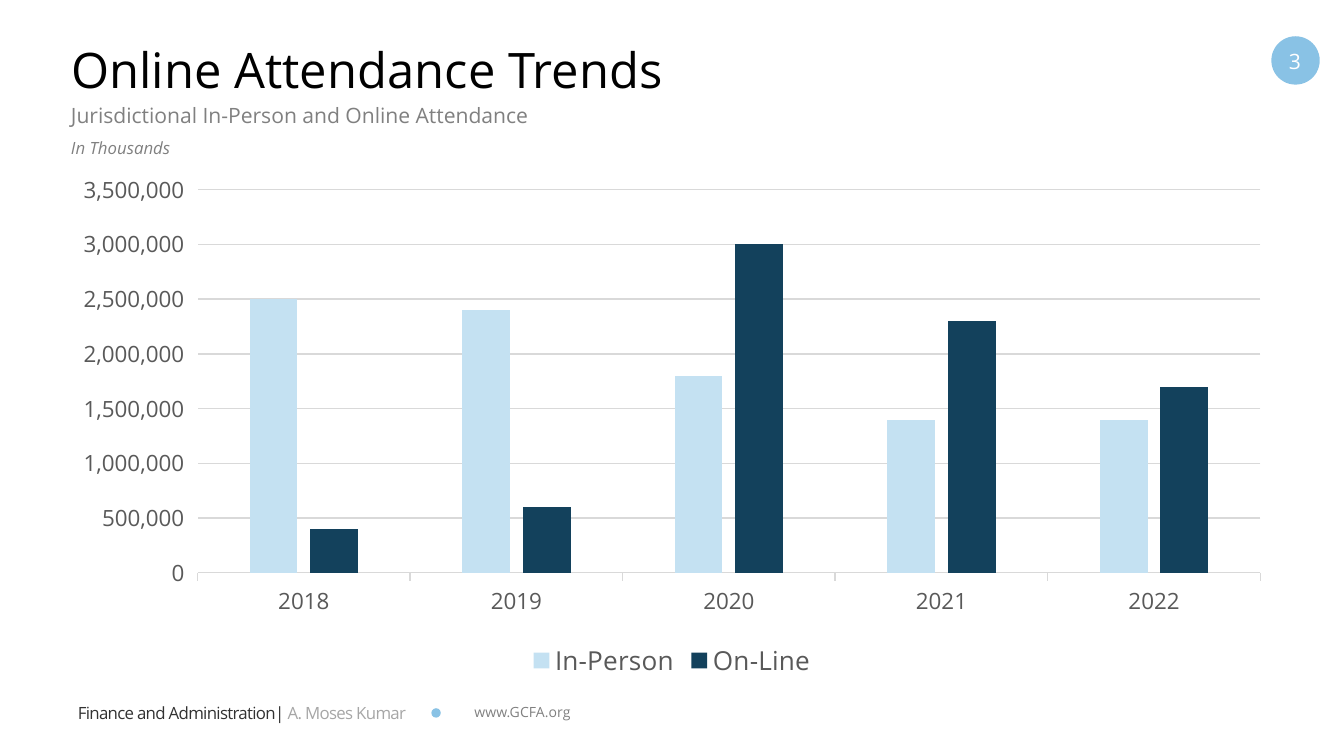
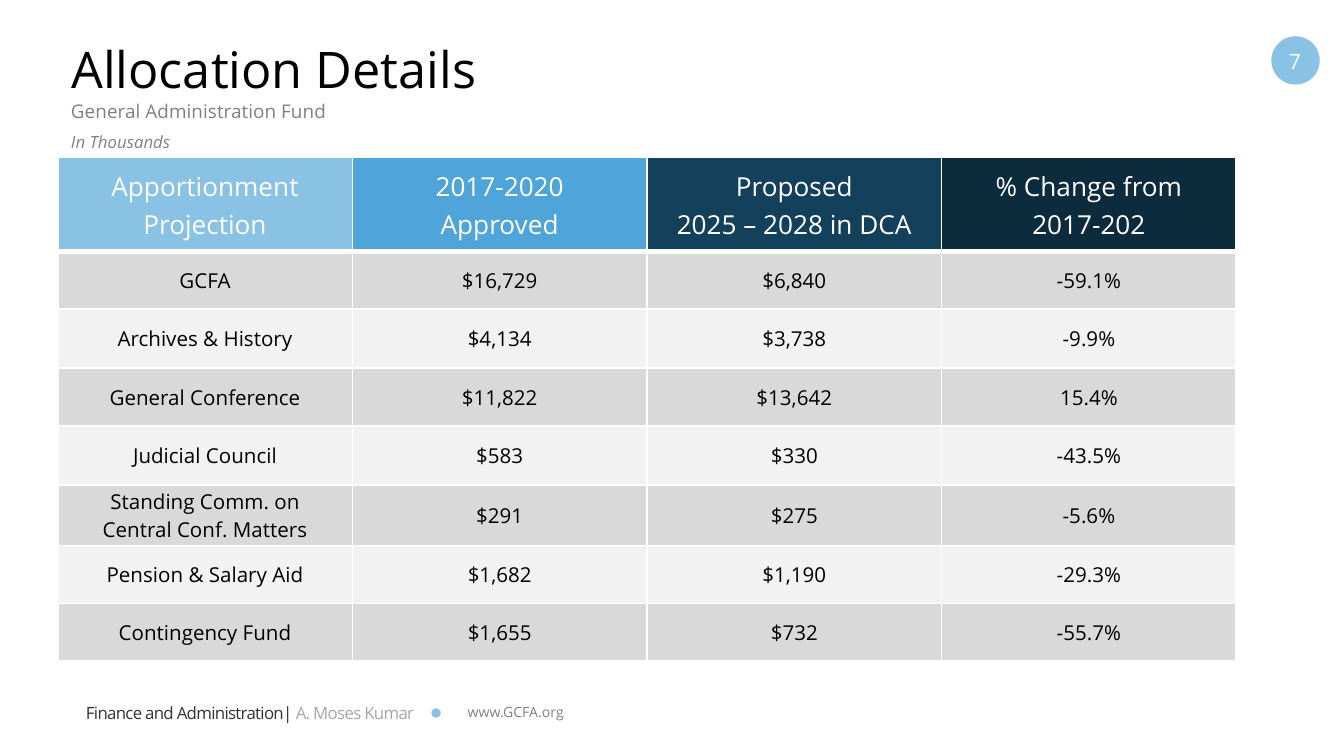
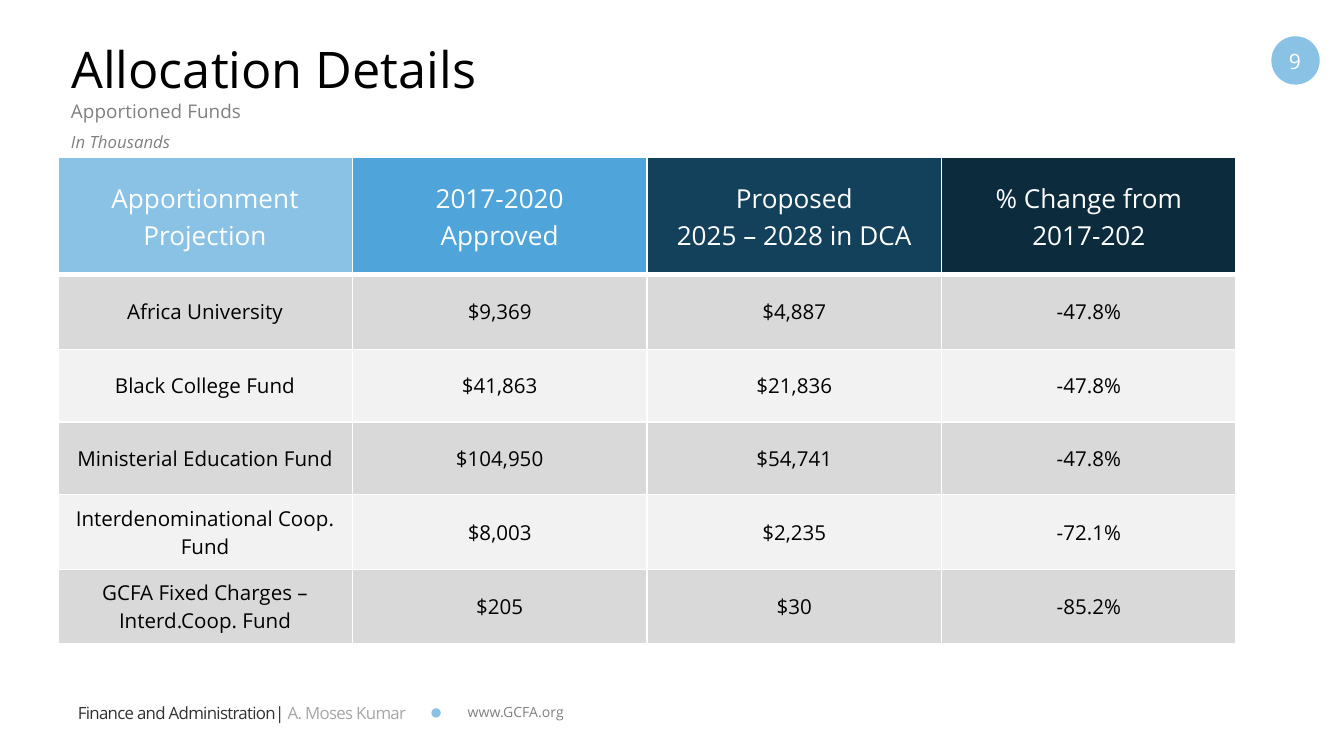
import pptx
import pptx.chart.data
import pptx.dml.color
import pptx.enum.chart
import pptx.enum.shapes
import pptx.enum.text
import pptx.oxml
import pptx.oxml.ns
import pptx.util
from pptx.util import Inches, Pt

FONT = "Open Sans"
BLACK, WHITE = "000000", "FFFFFF"
GRAY, DARK_GRAY, PALE_GRAY = "808080", "323232", "A6A6A6"
CHART_TEXT, GRID = "595959", "D9D9D9"
SKY, BLUE, NAVY, MIDNIGHT, PALE_BLUE = "89C2E5", "4FA4D9", "13415C", "0C2C3E", "C4E1F2"
HEADER_FILLS = [SKY, BLUE, NAVY, MIDNIGHT]
BAND_FILLS = ["D9D9D9", "F2F2F2"]

LEFT = 0.43
TABLE_TOP, TABLE_WIDTH = 1.17, 8.77
CENTER = pptx.enum.text.PP_ALIGN.CENTER
MIDDLE = pptx.enum.text.MSO_ANCHOR.MIDDLE

TABLE_HEADER = ["Apportionment\nProjection", "2017-2020\nApproved",
                "Proposed\n2025 – 2028 in DCA", "% Change from\n2017-202"]
GENERAL_ADMINISTRATION = [
    ["GCFA", "$16,729", "$6,840", "-59.1%"],
    ["Archives & History", "$4,134", "$3,738", "-9.9%"],
    ["General Conference", "$11,822", "$13,642", "15.4%"],
    ["Judicial Council", "$583", "$330", "-43.5%"],
    ["Standing Comm. on\nCentral Conf. Matters", "$291", "$275", "-5.6%"],
    ["Pension & Salary Aid", "$1,682", "$1,190", "-29.3%"],
    ["Contingency Fund", "$1,655", "$732", "-55.7%"],
]
APPORTIONED_FUNDS = [
    ["Africa University", "$9,369", "$4,887", "-47.8%"],
    ["Black College Fund", "$41,863", "$21,836", "-47.8%"],
    ["Ministerial Education Fund", "$104,950", "$54,741", "-47.8%"],
    ["Interdenominational Coop. Fund", "$8,003", "$2,235", "-72.1%"],
    ["GCFA Fixed Charges – Interd.Coop. Fund", "$205", "$30", "-85.2%"],
]
YEARS = ["2018", "2019", "2020", "2021", "2022"]
ATTENDANCE = [
    ("In-Person", PALE_BLUE, [2500000, 2400000, 1800000, 1400000, 1400000]),
    ("On-Line", NAVY, [400000, 600000, 3000000, 2300000, 1700000]),
]


def color(value):
    return pptx.dml.color.RGBColor.from_string(value)


def style_font(font, size, fill):
    font.name = FONT
    font.size = Pt(size)
    font.bold = False
    font.color.rgb = color(fill)


def add_span(para, text, size, fill, italic=False, spacing=None):
    """Add one run; spacing is in hundredths of a point."""
    span = para.add_run()
    span.text = text
    style_font(span.font, size, fill)
    if italic:
        span.font.italic = True
    if spacing is not None:
        span.font._element.set("spc", str(spacing))


def add_box(page, left, top, width, height):
    box = page.shapes.add_textbox(Inches(left), Inches(top), Inches(width), Inches(height))
    box.text_frame.word_wrap = True
    return box.text_frame


def add_label(page, left, top, width, height):
    """Add a middle-anchored box with tight margins and return its paragraph."""
    frame = add_box(page, left, top, width, height)
    frame.vertical_anchor = MIDDLE
    frame.margin_left = frame.margin_right = Inches(0.07)
    frame.margin_top = frame.margin_bottom = Inches(0.04)
    return frame.paragraphs[0]


def add_dot(page, left, top, width, height):
    dot = page.shapes.add_shape(pptx.enum.shapes.MSO_SHAPE.OVAL, Inches(left), Inches(top),
                                Inches(width), Inches(height))
    dot.shadow.inherit = False
    dot.fill.solid()
    dot.fill.fore_color.rgb = color(SKY)
    dot.line.fill.background()


def add_title(page, text, width, size):
    title = page.shapes.title
    title.left, title.top = Inches(LEFT), Inches(0.29)
    title.width, title.height = Inches(width), Inches(0.5)
    frame = title.text_frame
    frame.auto_size = pptx.enum.text.MSO_AUTO_SIZE.NONE
    frame.vertical_anchor = MIDDLE
    para = frame.paragraphs[0]
    para.alignment = pptx.enum.text.PP_ALIGN.LEFT
    para.line_spacing = 0.9
    add_span(para, text, size, BLACK)


def add_subtitle(page, text, top, height, size):
    frame = add_box(page, LEFT, top, 8.77, height)
    add_span(frame.paragraphs[0], text, size, GRAY)
    unit = frame.add_paragraph()
    unit.line_spacing = 1.5
    add_span(unit, "In Thousands", 9, GRAY, italic=True)


def add_footer(page, owner_left, site_left):
    add_dot(page, 3.21, 5.27, 0.07, 0.07)
    add_span(add_label(page, site_left, 5.21, 1.26, 0.17), "www.GCFA.org", 7.5, GRAY)
    owner = add_label(page, owner_left, 5.19, 2.7, 0.23)
    add_span(owner, "Finance and Administration| ", 9, DARK_GRAY, spacing=-38)
    add_span(owner, "A. Moses Kumar", 9, PALE_GRAY, spacing=-38)


def add_page_number(page, number):
    add_dot(page, 9.46, 0.27, 0.36, 0.36)
    para = add_label(page, 9.37, 0.34, 0.53, 0.23)
    para.alignment = CENTER
    add_span(para, str(number), 11.25, WHITE)


def add_page(deck, title, number, title_width=9.14, title_size=27,
             owner_left=0.51, site_left=3.41):
    page = deck.slides.add_slide(deck.slide_layouts[5])
    add_title(page, title, title_width, title_size)
    add_footer(page, owner_left, site_left)
    add_page_number(page, number)
    return page


def set_borders(cell, top, bottom):
    """Draw white cell borders, with top and bottom widths in points."""
    properties = cell._tc.get_or_add_tcPr()
    for side, width in (("L", 1), ("R", 1), ("T", top), ("B", bottom)):
        properties.append(pptx.oxml.parse_xml(
            f'<a:ln{side} {pptx.oxml.ns.nsdecls("a")} w="{Pt(width)}"><a:solidFill>'
            f'<a:srgbClr val="{WHITE}"/></a:solidFill></a:ln{side}>'))


def fill_cell(cell, text, fill, size, text_color, line_spacing=None):
    cell.fill.solid()
    cell.fill.fore_color.rgb = color(fill)
    cell.vertical_anchor = MIDDLE
    cell.margin_left = cell.margin_right = Inches(0.08)
    cell.margin_top = cell.margin_bottom = Inches(0.01)
    frame = cell.text_frame
    for index, line in enumerate(text.split("\n")):
        para = frame.add_paragraph() if index else frame.paragraphs[0]
        para.alignment = CENTER
        para.line_spacing = line_spacing
        add_span(para, line, size, text_color)


def add_allocation_table(page, records, row_heights):
    rows = [TABLE_HEADER] + records
    table = page.shapes.add_table(len(rows), len(TABLE_HEADER), Inches(LEFT), Inches(TABLE_TOP),
                                  Inches(TABLE_WIDTH), Inches(sum(row_heights))).table
    table.horz_banding = False
    for row_index, (values, height) in enumerate(zip(rows, row_heights)):
        table.rows[row_index].height = Inches(height)
        for column_index, text in enumerate(values):
            cell = table.cell(row_index, column_index)
            set_borders(cell, 3 if row_index == 1 else 1, 3 if row_index == 0 else 1)
            if row_index == 0:
                fill_cell(cell, text, HEADER_FILLS[column_index], 14, WHITE, Pt(20))
            else:
                fill_cell(cell, text, BAND_FILLS[(row_index - 1) % 2], 11, BLACK)


def style_line(line):
    line.color.rgb = color(GRID)
    line.width = Pt(0.75)


def add_attendance_chart(page):
    data = pptx.chart.data.CategoryChartData(number_format="#,##0")
    data.categories = YEARS
    for name, _, values in ATTENDANCE:
        data.add_series(name, values)
    chart = page.shapes.add_chart(pptx.enum.chart.XL_CHART_TYPE.COLUMN_CLUSTERED, Inches(0.44),
                                  Inches(1.22), Inches(9.12), Inches(3.87), data).chart
    style_font(chart.font, 12, CHART_TEXT)
    chart.has_title = False
    chart.has_legend = True
    chart.legend.position = pptx.enum.chart.XL_LEGEND_POSITION.BOTTOM
    chart.legend.include_in_layout = False
    style_font(chart.legend.font, 14, CHART_TEXT)

    plot = chart.plots[0]
    plot.vary_by_categories = False
    plot.gap_width = 219
    plot.overlap = -27
    for series, (_, fill, _) in zip(plot.series, ATTENDANCE):
        series.format.fill.solid()
        series.format.fill.fore_color.rgb = color(fill)

    for axis in (chart.category_axis, chart.value_axis):
        axis.major_tick_mark = pptx.enum.chart.XL_TICK_MARK.OUTSIDE
        style_font(axis.tick_labels.font, 12, CHART_TEXT)
    style_line(chart.category_axis.format.line)
    values = chart.value_axis
    values.minimum_scale, values.maximum_scale, values.major_unit = 0, 3500000, 500000
    values.tick_labels.number_format = "#,##0"
    values.tick_labels.number_format_is_linked = False
    values.format.line.fill.background()
    style_line(values.major_gridlines.format.line)


def main():
    deck = pptx.Presentation()
    deck.slide_width = Inches(10)
    deck.slide_height = deck.slide_width * 9 // 16

    page = add_page(deck, "Online Attendance Trends", 3, title_width=8.62, title_size=26.25,
                    site_left=3.46)
    add_subtitle(page, "Jurisdictional In-Person and Online Attendance", 0.71, 0.49, 11.25)
    add_attendance_chart(page)

    page = add_page(deck, "Allocation Details", 7, owner_left=0.57)
    add_subtitle(page, "General Administration Fund", 0.69, 0.47, 10.13)
    add_allocation_table(page, GENERAL_ADMINISTRATION,
                         [0.7, 0.43, 0.44, 0.43, 0.44, 0.45, 0.43, 0.43])

    page = add_page(deck, "Allocation Details", 9)
    add_subtitle(page, "Apportioned Funds", 0.69, 0.47, 10.13)
    add_allocation_table(page, APPORTIONED_FUNDS, [0.87, 0.56, 0.54, 0.54, 0.56, 0.55])

    deck.save("out.pptx")


if __name__ == "__main__":
    main()
